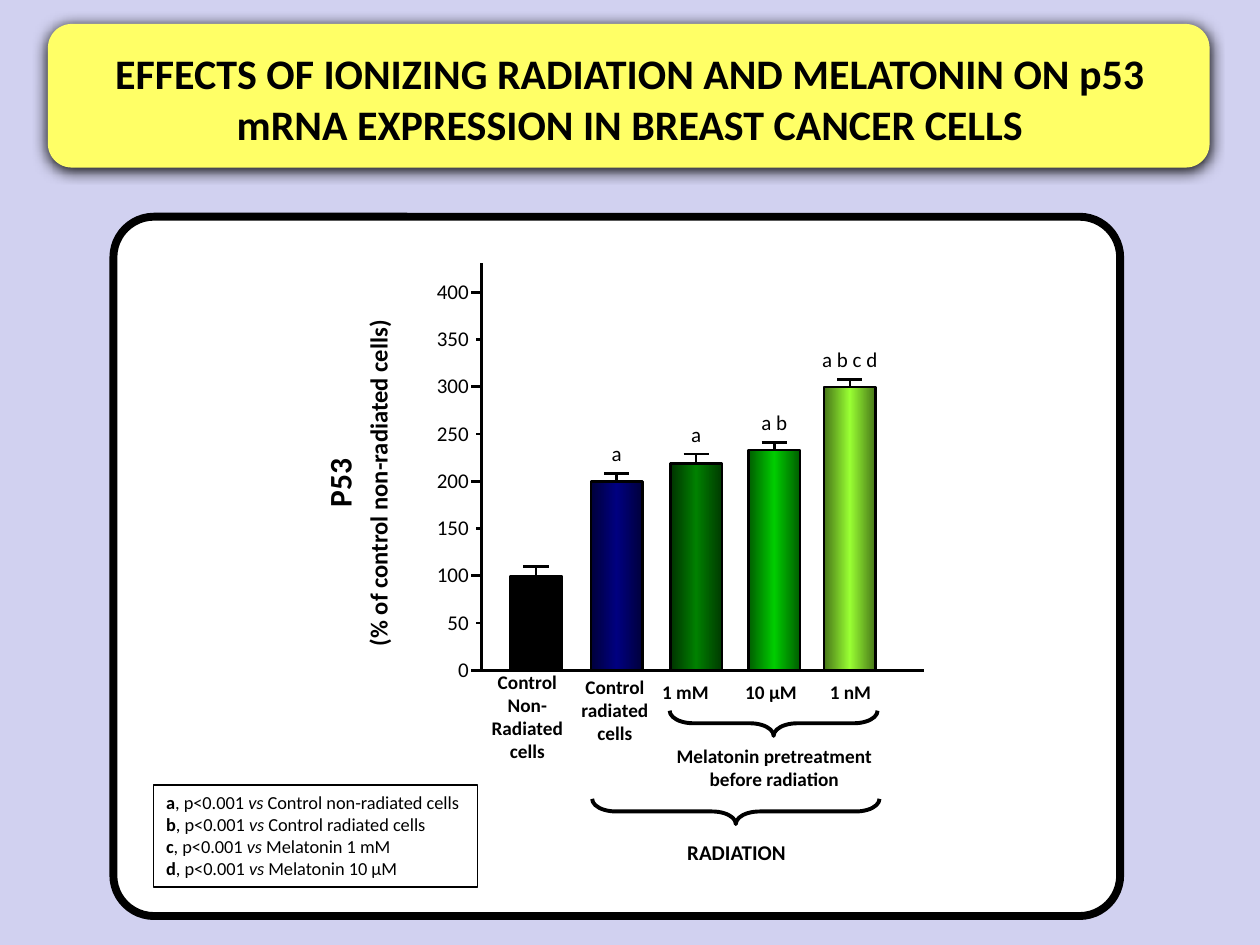
from copy import deepcopy
from pptx import Presentation
from pptx.dml.color import RGBColor
from pptx.enum import shapes as es, text as et
from pptx.oxml import parse_xml
from pptx.oxml.ns import nsdecls, qn
from pptx.util import Inches, Pt

# Content
TITLE = ("EFFECTS OF IONIZING RADIATION AND MELATONIN ON p53 "
         "mRNA EXPRESSION IN BREAST CANCER CELLS")
# left edge, value, top of error bar, letters, fill colours
BARS = [
    (4.05, 100, 110, "", ["000000"]),
    (4.69, 200, 208, "a", ["00003B", "000080", "00003B"]),
    (5.32, 219, 229, "a", ["003300", "008000", "003B00"]),
    (5.94, 233, 241, "a b", ["005E00", "00CC00", "005E00"]),
    (6.54, 300, 308, "a b c d", ["477618", "99FF33", "477618"]),
]
# words, left, top, width, height, size
LABELS = [
    ("Control Non-Radiated cells", 3.84, 5.32, 0.69, 0.74, 11),
    ("Control radiated cells", 4.52, 5.36, 0.72, 0.56, 11),
    ("1 mM", 5.04, 5.4, 0.8, 0.2, 11),
    ("10 µM", 5.72, 5.4, 0.8, 0.2, 11),
    ("1 nM", 6.35, 5.4, 0.8, 0.2, 11),
    ("Melatonin pretreatment before radiation", 5.15, 5.91, 1.99, 0.37, 11),
    ("RADIATION", 4.85, 6.66, 1.99, 0.2, 12),
]
BRACES = [(6.14, 5.74, 1.65), (5.84, 6.44, 2.28)]  # centre x, centre y, span
NOTES = [("a", "Control non-radiated cells"), ("b", "Control radiated cells"),
         ("c", "Melatonin 1 mM"), ("d", "Melatonin 10 µM")]

# Scale of the plot
AXIS, BASE, UNIT, WIDE = 3.82, 5.32, 0.0075, 0.41
KIND = es.MSO_SHAPE
ALIGN = et.PP_ALIGN

prs = Presentation()
prs.slide_width, prs.slide_height = Inches(10), Inches(7.5)
slide = prs.slides.add_slide(prs.slide_layouts[5])


def hue(code):
    return RGBColor.from_string(code)


def height(value):
    return BASE - value * UNIT


def box(kind, x, y, w, h, fill=None, line=None):
    shp = slide.shapes.add_shape(kind, *map(Inches, (x, y, w, h)))
    shp.shadow.inherit = False
    if fill:
        shp.fill.solid()
        shp.fill.fore_color.rgb = hue(fill)
    else:
        shp.fill.background()
    if line:
        shp.line.color.rgb = hue("000000")
        shp.line.width = Pt(line)
    else:
        shp.line.fill.background()
    return shp


def rule(x1, y1, x2, y2):
    con = slide.shapes.add_connector(
        es.MSO_CONNECTOR.STRAIGHT, *map(Inches, (x1, y1, x2, y2)))
    con.line.color.rgb = hue("000000")
    con.line.width = Pt(1.5)
    con._element.spPr.append(parse_xml(f"<a:effectLst {nsdecls('a')}/>"))


def style(par, size, bold=None, align=ALIGN.CENTER):
    par.alignment = align
    par.font.name, par.font.size, par.font.bold = "Calibri", Pt(size), bold
    par.font.color.rgb = hue("000000")


def label(words, x, y, w, h, size, bold=None, align=ALIGN.CENTER):
    shp = slide.shapes.add_textbox(*map(Inches, (x, y, w, h)))
    frame = shp.text_frame
    frame.word_wrap = True
    frame.margin_left = frame.margin_right = 0
    frame.margin_top = frame.margin_bottom = 0
    frame.text = words
    style(frame.paragraphs[0], size, bold, align)
    return shp


def shade(shp, codes):
    shp.fill.gradient()
    shp.fill.gradient_angle = 0
    stops = shp._element.spPr.find(".//" + qn("a:gsLst"))
    stops.insert(1, deepcopy(stops[0]))
    for stop, code, place in zip(shp.fill.gradient_stops, codes, (0, 0.5, 1)):
        stop.color.rgb = hue(code)
        stop.position = place


# Background and card
slide.background.fill.solid()
slide.background.fill.fore_color.rgb = hue("D1D1F0")
card = box(KIND.ROUNDED_RECTANGLE, 0.9, 1.72, 7.99, 5.55, "FFFFFF", 4.5)
card.adjustments[0] = 0.058

# Bars with error bars and letters
for x, value, top, marks, codes in BARS:
    mid, cap = x + WIDE / 2, height(top)
    rule(mid - 0.1, cap, mid + 0.1, cap)
    rule(mid, cap, mid, height(value))
    bar = box(KIND.RECTANGLE, x, height(value), WIDE, value * UNIT,
              codes[0], 1.5)
    if len(codes) > 1:
        shade(bar, codes)
    if marks:
        label(marks, mid - 0.4, cap - 0.26, 0.8, 0.2, 12)

# Axes, ticks and scale
rule(AXIS, BASE, AXIS, 2.09)
rule(3.78, BASE, 7.33, BASE)
for value in range(0, 401, 50):
    y = height(value)
    rule(AXIS, y, AXIS - (0.04 if value % 100 else 0.08), y)
    label(str(value), 3.32, y - 0.11, 0.4, 0.2, 12, align=ALIGN.RIGHT)

axis = label("P53", 1.43, 3.54, 2.81, 0.59, 18, True)
axis.rotation = 270
unit = axis.text_frame.add_paragraph()
unit.text = "(% of control non-radiated cells)"
style(unit, 14, True)
unit.space_before = Pt(3)

# Group labels and braces
for words, *place in LABELS:
    label(words, *place, bold=True)
for x, y, span in BRACES:
    brace = box(KIND.LEFT_BRACE, x - 0.1, y - span / 2, 0.2, span, line=2.25)
    brace.rotation = 270
    brace.adjustments[0] = 0.94

# Key to the letters
key = box(KIND.RECTANGLE, 1.22, 6.23, 2.57, 0.81, "FFFFFF", 0.75).text_frame
key.word_wrap = False
key.vertical_anchor = et.MSO_ANCHOR.TOP
for i, (mark, group) in enumerate(NOTES):
    par = key.add_paragraph() if i else key.paragraphs[0]
    style(par, 10.5, align=ALIGN.LEFT)
    for words in (mark, ", p<0.001 ", "vs", " " + group):
        run = par.add_run()
        run.text = words
        if words == mark:
            run.font.bold = True
        elif words == "vs":
            run.font.italic = True

# Title on its banner
banner = box(KIND.ROUNDED_RECTANGLE, 0.38, 0.19, 9.22, 1.14, "FFFF66")
banner._element.spPr.find(qn("a:effectLst")).append(parse_xml(
    f'<a:outerShdw {nsdecls("a")} blurRad="{Pt(8.5)}" dist="{Pt(1)}" '
    'dir="5400000" rotWithShape="0"><a:srgbClr val="000000"/></a:outerShdw>'))
title = slide.shapes.title
title.left, title.top, title.width, title.height = map(
    Inches, (0.39, 0.33, 9.22, 0.91))
title.text_frame.text = TITLE
title.text_frame.word_wrap = True
title.text_frame.vertical_anchor = et.MSO_ANCHOR.TOP
style(title.text_frame.paragraphs[0], 24, True)
banner._element.addnext(title._element)

prs.save("out.pptx")
